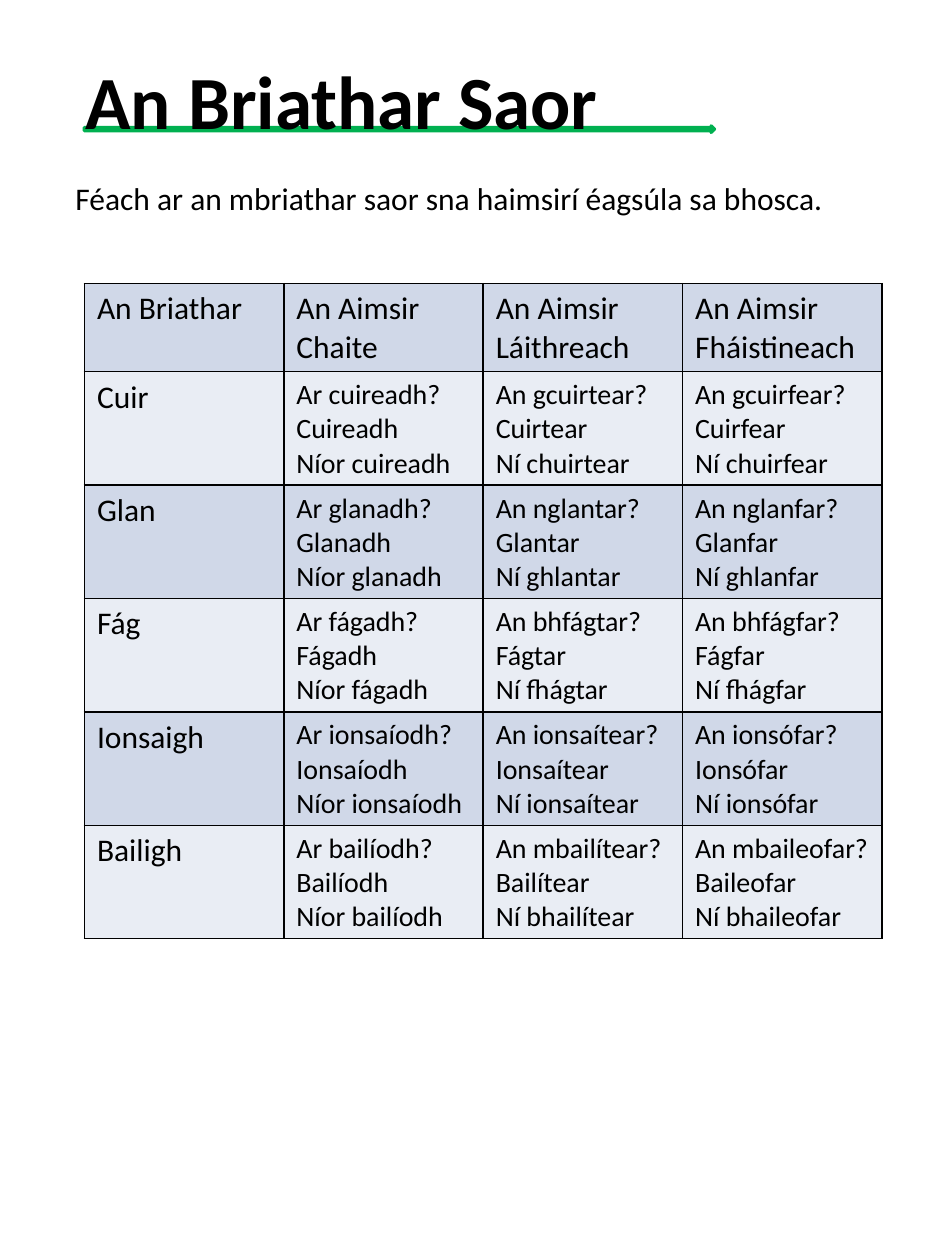
from lxml.etree import SubElement
from pptx import Presentation
from pptx.dml.color import RGBColor
from pptx.enum.shapes import MSO_SHAPE
from pptx.enum.text import MSO_ANCHOR, PP_ALIGN
from pptx.oxml.ns import qn
from pptx.util import Inches, Pt

BLACK = RGBColor(0x00, 0x00, 0x00)
GREEN = RGBColor(0x00, 0xB0, 0x50)
BLUE = RGBColor(0xD0, 0xD8, 0xE8)
PALE = RGBColor(0xE9, 0xED, 0xF4)
FONT = "Calibri"

TITLE = "An Briathar Saor"
INTRO = "Féach ar an mbriathar saor sna haimsirí éagsúla sa bhosca."
HEADER = ["An Briathar", "An Aimsir Chaite", "An Aimsir Láithreach", "An Aimsir Fháistineach"]
VERBS = [
    ["Cuir",
     "Ar cuireadh?\nCuireadh\nNíor cuireadh",
     "An gcuirtear?\nCuirtear\nNí chuirtear",
     "An gcuirfear?\nCuirfear\nNí chuirfear"],
    ["Glan",
     "Ar glanadh?\nGlanadh\nNíor glanadh",
     "An nglantar?\nGlantar\nNí ghlantar",
     "An nglanfar?\nGlanfar\nNí ghlanfar"],
    ["Fág",
     "Ar fágadh?\nFágadh\nNíor fágadh",
     "An bhfágtar?\nFágtar\nNí fhágtar",
     "An bhfágfar?\nFágfar\nNí fhágfar"],
    ["Ionsaigh",
     "Ar ionsaíodh?\nIonsaíodh\nNíor ionsaíodh",
     "An ionsaítear?\nIonsaítear\nNí ionsaítear",
     "An ionsófar?\nIonsófar\nNí ionsófar"],
    ["Bailigh",
     "Ar bailíodh?\nBailíodh\nNíor bailíodh",
     "An mbailítear?\nBailítear\nNí bhailítear",
     "An mbaileofar?\nBaileofar\nNí bhaileofar"],
]
HEADER_HEIGHT, VERB_HEIGHT = 0.7, 0.9
TABLE_WIDTH = 6.33


def write(frame, text, size, bold=False):
    frame.text = text
    for para in frame.paragraphs:
        para.font.name = FONT
        para.font.size = Pt(size)
        para.font.bold = bold
        para.font.color.rgb = BLACK


def add_text(page, area, text, size, bold=False):
    box = page.shapes.add_textbox(*map(Inches, area))
    box.text_frame.word_wrap = True
    write(box.text_frame, text, size, bold)
    return box.text_frame


def add_borders(cell):
    properties = cell._tc.get_or_add_tcPr()
    for side in ("a:lnL", "a:lnR", "a:lnT", "a:lnB"):
        line = SubElement(properties, qn(side), w=str(Pt(1)))
        fill = SubElement(line, qn("a:solidFill"))
        SubElement(fill, qn("a:srgbClr"), val=str(BLACK))


def add_verb_table(page):
    rows = [HEADER] + VERBS
    heights = [HEADER_HEIGHT] + [VERB_HEIGHT] * len(VERBS)
    table = page.shapes.add_table(
        len(rows), len(HEADER), Inches(0.67), Inches(2.25),
        Inches(TABLE_WIDTH), Inches(sum(heights))).table
    for column in table.columns:
        column.width = Inches(TABLE_WIDTH / len(HEADER))
    for r, (texts, height) in enumerate(zip(rows, heights)):
        table.rows[r].height = Inches(height)
        for c, text in enumerate(texts):
            cell = table.cell(r, c)
            write(cell.text_frame, text, 18 if r == 0 or c == 0 else 16)
            add_borders(cell)
            cell.fill.solid()
            cell.fill.fore_color.rgb = PALE if r % 2 else BLUE


def main():
    deck = Presentation()
    deck.slide_width, deck.slide_height = Inches(7.5), Inches(10)
    page = deck.slides.add_slide(deck.slide_layouts[6])

    intro = add_text(page, (0.5, 1.37, 6.25, 0.4), INTRO, 18)
    intro.paragraphs[0].alignment = PP_ALIGN.JUSTIFY

    underline = page.shapes.add_shape(
        MSO_SHAPE.RIGHT_ARROW, Inches(0.67), Inches(1), Inches(5), Inches(0.05))
    underline.shadow.inherit = False
    underline.fill.solid()
    underline.fill.fore_color.rgb = GREEN
    underline.line.color.rgb = GREEN
    underline.line.width = Pt(2)

    title = add_text(page, (0.58, 0.33, 6.67, 0.92), TITLE, 42.9, True)
    title.vertical_anchor = MSO_ANCHOR.MIDDLE

    add_verb_table(page)
    deck.save("out.pptx")


if __name__ == "__main__":
    main()
